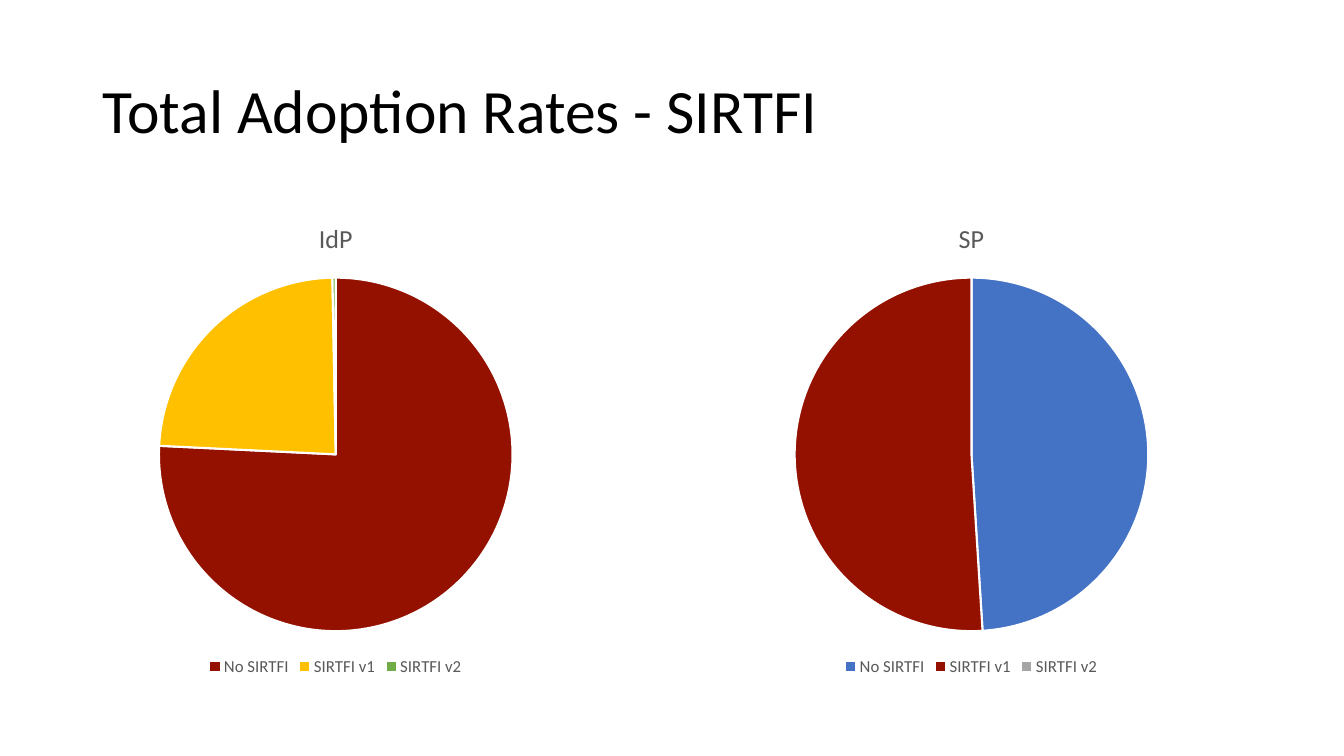
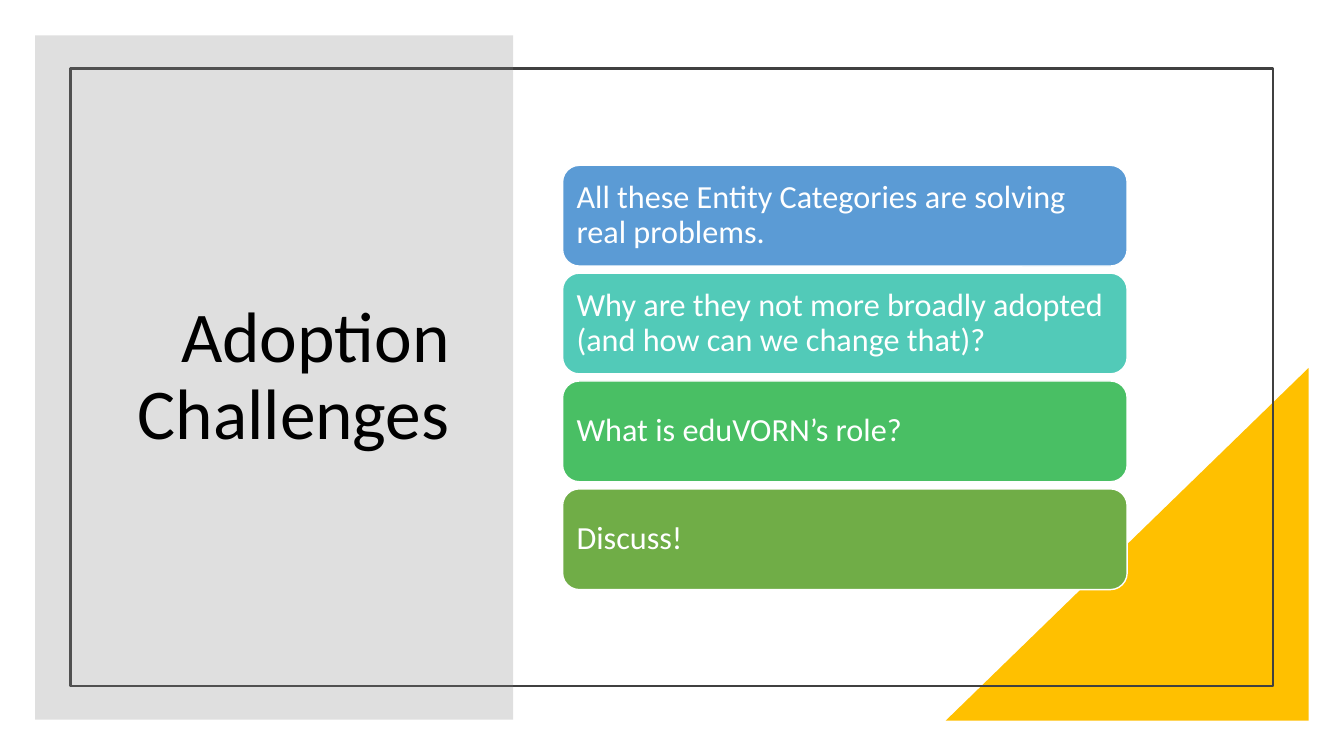
"""Build two slides: SIRTFI adoption pies and a list of adoption challenges."""
from lxml.etree import SubElement
from pptx import Presentation
from pptx.chart.data import CategoryChartData as ChartData
from pptx.dml.color import RGBColor as RGB
from pptx.enum.chart import XL_CHART_TYPE as Chart, XL_LEGEND_POSITION as Legend
from pptx.enum.shapes import MSO_SHAPE as Shape
from pptx.enum.text import MSO_ANCHOR as Anchor, MSO_AUTO_SIZE as Fit, PP_ALIGN as Align
from pptx.oxml.ns import qn
from pptx.util import Inches, Pt

FONT = "Calibri"
HEX = {
    "black": "000000", "white": "FFFFFF", "dark": "404040", "label": "595959",
    "gray": "808080", "silver": "A5A5A5", "red": "941100", "gold": "FFC000",
    "blue": "4472C4", "sky": "5B9BD5", "teal": "52CAB8", "mint": "49BF64",
    "green": "70AD47",
}
COLOR = {name: RGB.from_string(code) for name, code in HEX.items()}


def write(shape, text, size, color="black", align=Align.LEFT, inset=0.1):
    frame = shape.text_frame
    frame.text = text
    frame.word_wrap = True
    frame.auto_size = Fit.NONE
    frame.vertical_anchor = Anchor.MIDDLE
    frame.margin_left = frame.margin_right = Inches(inset)
    para = frame.paragraphs[0]
    para.alignment = align
    para.line_spacing = 0.9
    para.font.size = Pt(size)
    para.font.name = FONT
    para.font.color.rgb = COLOR[color]


def draw(slide, kind, box, fill=None, line=None, width=1):
    shape = slide.shapes.add_shape(kind, *map(Inches, box))
    shape.shadow.inherit = False
    if fill:
        shape.fill.solid()
        shape.fill.fore_color.rgb = COLOR[fill]
    else:
        shape.fill.background()
    if line:
        shape.line.color.rgb = COLOR[line]
        shape.line.width = Pt(width)
    else:
        shape.line.fill.background()
    return shape


deck = Presentation()
deck.slide_width, deck.slide_height = Inches(13.33), Inches(7.5)
heads = [
    ("Total Adoption Rates - SIRTFI", (0.92, 0.4, 11.5, 1.45), 44, Align.LEFT),
    ("Adoption Challenges", (1.1, 1.3, 3.46, 4.9), 51, Align.RIGHT),
]
slides = []
for text, box, size, align in heads:
    slide = deck.slides.add_slide(deck.slide_layouts[5])
    title = slide.shapes.title
    title.left, title.top, title.width, title.height = map(Inches, box)
    write(title, text, size, align=align)
    slides.append(slide)
rates, issues = slides

pies = [
    ("IdP", 0.67, 5.32, (76, 24, 0.3), ("red", "gold", "green")),
    ("SP", 6.09, 7.09, (49, 51, 0), ("blue", "red", "silver")),
]
for name, left, width, values, hues in pies:
    data = ChartData()
    data.categories = ["No SIRTFI", "SIRTFI v1", "SIRTFI v2"]
    data.add_series(name, values)
    box = map(Inches, (left, 1.99, width, 4.76))
    chart = rates.shapes.add_chart(Chart.PIE, *box, data).chart
    chart.font.name = FONT
    chart.font.size = Pt(10)
    chart.has_title = True
    chart.chart_title.include_in_layout = False
    chart.chart_title.text_frame.text = name
    head = chart.chart_title.text_frame.paragraphs[0].font
    head.size, head.bold = Pt(18.6), False
    chart.has_legend = True
    chart.legend.position = Legend.BOTTOM
    chart.legend.include_in_layout = False
    chart.legend.font.size = Pt(12)
    for font in (head, chart.legend.font):
        font.name = FONT
        font.color.rgb = COLOR["label"]
    plot = chart.plots[0]
    plot.vary_by_categories = True
    for index, hue in enumerate(hues):
        wedge = plot.series[0].points[index].format
        wedge.fill.solid()
        wedge.fill.fore_color.rgb = COLOR[hue]
        wedge.line.color.rgb = COLOR["white"]
        wedge.line.width = Pt(1.5)

corner = draw(issues, Shape.RIGHT_TRIANGLE, (9.38, 3.65, 3.6, 3.5), "gold")
corner._element.spPr.find(qn("a:xfrm")).set("flipH", "1")
draw(issues, Shape.RECTANGLE, (0.7, 0.68, 11.93, 6.13), line="dark", width=1.5)
panel = draw(issues, Shape.RECTANGLE, (0.35, 0.35, 4.74, 6.79), "gray")
tint = panel._element.spPr.find(qn("a:solidFill"))[0]
SubElement(tint, qn("a:alpha"), val="25000")
issues.shapes._spTree.append(issues.shapes.title._element)

points = [
    ("All these Entity Categories are solving real problems.", "sky"),
    ("Why are they not more broadly adopted (and how can we change that)?", "teal"),
    ("What is eduVORN’s role?", "mint"),
    ("Discuss!", "green"),
]
for row, (text, hue) in enumerate(points):
    box = (5.58, 1.64 + row * 1.07, 5.6, 1)
    card = draw(issues, Shape.ROUNDED_RECTANGLE, box, hue, "white")
    write(card, text, 23, "white", inset=0.09)

deck.save("out.pptx")
